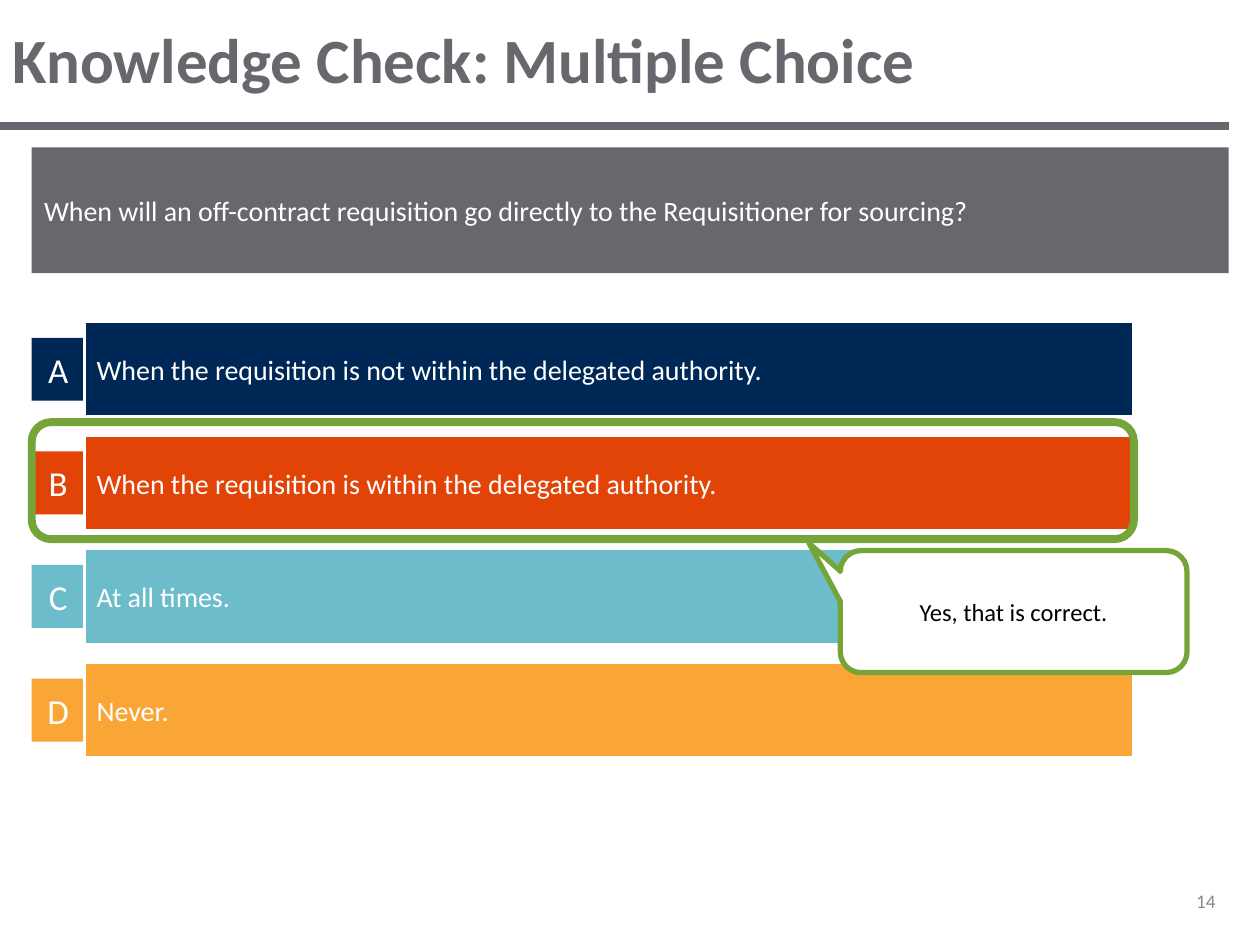
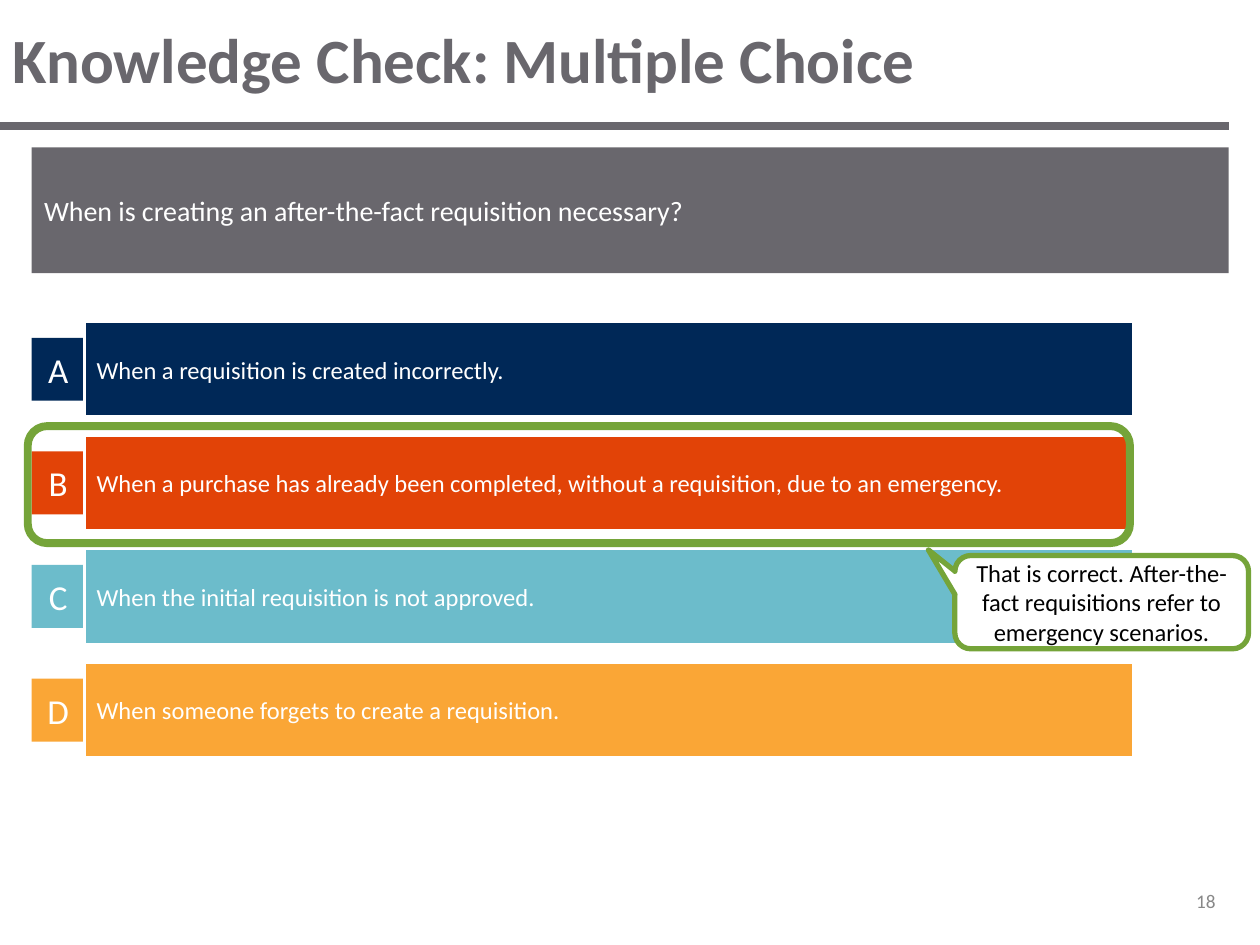
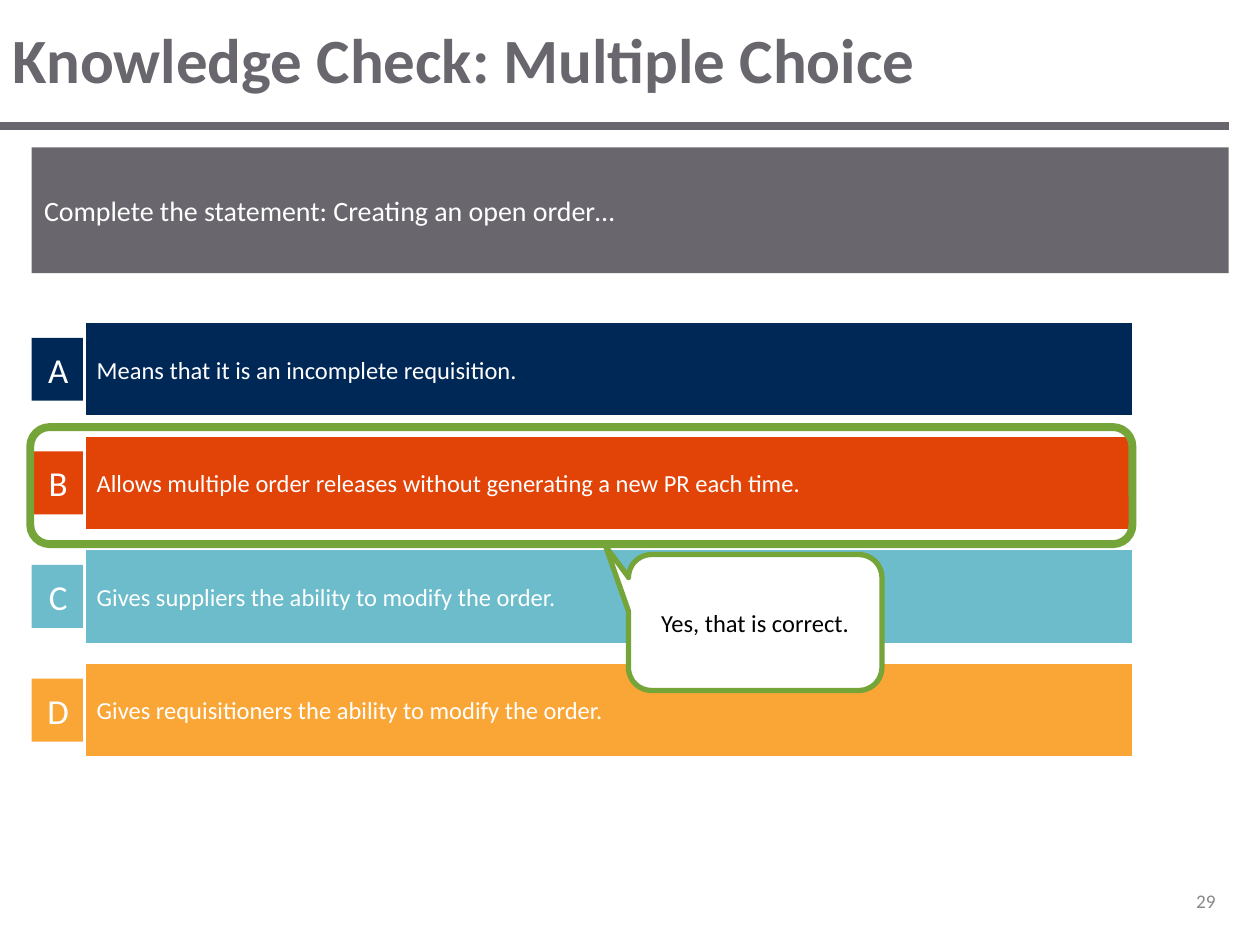
from lxml import etree
from pptx import Presentation
from pptx import util as u
from pptx.dml.color import RGBColor
from pptx.enum import shapes, text
from pptx.oxml.ns import qn

COLORS = {
    "gray": "69676D",
    "navy": "002857",
    "orange": "E24307",
    "teal": "6CBCCB",
    "amber": "FAA636",
    "green": "75A439",
    "page": "888888",
    "white": "FFFFFF",
    "black": "000000",
}
FONT = "Calibri"
TITLE = "Knowledge Check: Multiple Choice"
SHAPE = shapes.MSO_SHAPE
ALIGN = text.PP_ALIGN

MARGIN = 0.64
BAR_LEFT, BAR_TOP, BAR_WIDTH, BAR_HEIGHT = 1.7, 6.48, 21.16, 1.93
TAG_WIDTH, TAG_HEIGHT = 1.07, 1.27
ROW_STEP = 2.29
OPTIONS = [("A", "navy"), ("B", "orange"), ("C", "teal"), ("D", "amber")]

QUESTIONS = [
    {
        "page": "14",
        "question": "When will an off-contract requisition go directly to the Requisitioner for sourcing?",
        "answers": [
            "When the requisition is not within the delegated authority.",
            "When the requisition is within the delegated authority.",
            "At all times.",
            "Never.",
        ],
        "size": 16,
        "highlight": (0.64, 8.51),
        "feedback": "Yes, that is correct.",
        "callout": (16.94, 11.1, 6.99, 2.46),
    },
    {
        "page": "18",
        "question": "When is creating an after-the-fact requisition necessary?",
        "answers": [
            "When a requisition is created incorrectly.",
            "When a purchase has already been completed, without a requisition, due to an emergency.",
            "When the initial requisition is not approved.",
            "When someone forgets to create a requisition.",
        ],
        "size": 14,
        "highlight": (0.56, 8.59),
        "feedback": "That is correct. After-the-fact requisitions refer to emergency scenarios.",
        "callout": (19.25, 11.2, 5.92, 1.88),
    },
    {
        "page": "29",
        "question": "Complete the statement: Creating an open order…",
        "answers": [
            "Means that it is an incomplete requisition.",
            "Allows multiple order releases without generating a new PR each time.",
            "Gives suppliers the ability to modify the order.",
            "Gives requisitioners the ability to modify the order.",
        ],
        "size": 14,
        "highlight": (0.61, 8.61),
        "feedback": "Yes, that is correct.",
        "callout": (12.67, 11.18, 5.11, 2.74),
    },
]


def rgb(name):
    return RGBColor.from_string(COLORS[name])


def cm(box):
    return [u.Cm(v) for v in box]


def write(sp, content, size, color="white", align=ALIGN.LEFT, bold=False):
    tf = sp.text_frame
    frame = {
        "word_wrap": True,
        "auto_size": text.MSO_AUTO_SIZE.NONE,
        "vertical_anchor": text.MSO_ANCHOR.MIDDLE,
    }
    for name, value in frame.items():
        setattr(tf, name, value)
    p = tf.paragraphs[0]
    p.alignment = align
    r = p.add_run()
    r.text = content
    for name, value in {"name": FONT, "size": u.Pt(size), "bold": bold}.items():
        setattr(r.font, name, value)
    r.font.color.rgb = rgb(color)


def add_box(s, kind, box, fill=None, line=None, width=0):
    sp = s.shapes.add_shape(kind, *cm(box))
    sp.shadow.inherit = False
    if fill:
        sp.fill.solid()
        sp.fill.fore_color.rgb = rgb(fill)
    else:
        sp.fill.background()
    if line:
        sp.line.color.rgb = rgb(line)
        sp.line.width = u.Pt(width)
    else:
        sp.line.fill.background()
    return sp


def add_title(s):
    sp = s.shapes.title
    box = dict(zip(("left", "top", "width", "height"), cm((0, 0, 25.4, 2.34))))
    for name, value in box.items():
        setattr(sp, name, value)
    write(sp, TITLE, 36, "gray", bold=True)


def add_rule(s):
    line = s.shapes.add_connector(shapes.MSO_CONNECTOR.STRAIGHT, *cm((0, 2.54, 24.77, 2.54)))
    line.line.color.rgb = rgb("gray")
    line.line.width = u.Pt(5)
    etree.SubElement(line._element.spPr, qn("a:effectLst"))


def add_page_number(s, number):
    sp = s.shapes.add_textbox(*cm((20.52, 17.65, 4.24, 1.02)))
    write(sp, number, 11, "page", ALIGN.RIGHT)


def add_question(s, question):
    write(add_box(s, SHAPE.RECTANGLE, (MARGIN, 2.97, 24.13, 2.54), "gray"), question, 16)


def add_answers(s, answers, size):
    for i, ((letter, color), answer) in enumerate(zip(OPTIONS, answers)):
        top = BAR_TOP + i * ROW_STEP
        tag_top = top + (BAR_HEIGHT - TAG_HEIGHT) / 2
        tag = add_box(s, SHAPE.RECTANGLE, (MARGIN, tag_top, TAG_WIDTH, TAG_HEIGHT), color)
        write(tag, letter, 20, align=ALIGN.CENTER)
        bar = add_box(s, SHAPE.RECTANGLE, (BAR_LEFT, top, BAR_WIDTH, BAR_HEIGHT), color, "white", 2)
        write(bar, answer, size)


def add_highlight(s, corner):
    add_box(s, SHAPE.ROUNDED_RECTANGLE, (*corner, 22.22, 2.36), line="green", width=4.5)


def add_callout(s, box, feedback):
    sp = add_box(s, SHAPE.ROUNDED_RECTANGULAR_CALLOUT, box, "white", "green", 3)
    for i, value in enumerate((-0.59, -0.56, 0.17)):
        sp.adjustments[i] = value
    write(sp, feedback, 14, "black", ALIGN.CENTER)


def main():
    prs = Presentation()
    prs.slide_width, prs.slide_height = cm((25.4, 19.05))
    for q in QUESTIONS:
        s = prs.slides.add_slide(prs.slide_layouts[5])
        add_rule(s)
        add_title(s)
        add_page_number(s, q["page"])
        add_question(s, q["question"])
        add_answers(s, q["answers"], q["size"])
        add_highlight(s, q["highlight"])
        add_callout(s, q["callout"], q["feedback"])
    prs.save("out.pptx")


if __name__ == "__main__":
    main()
